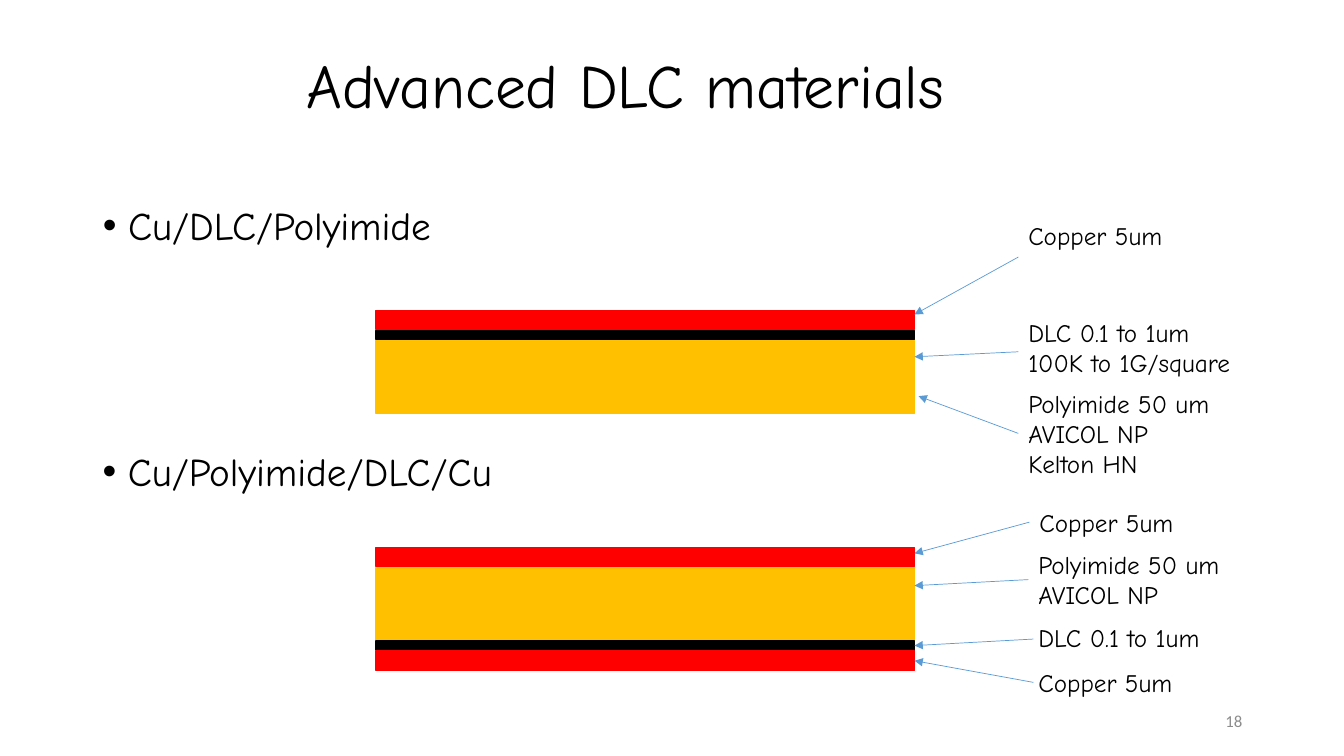
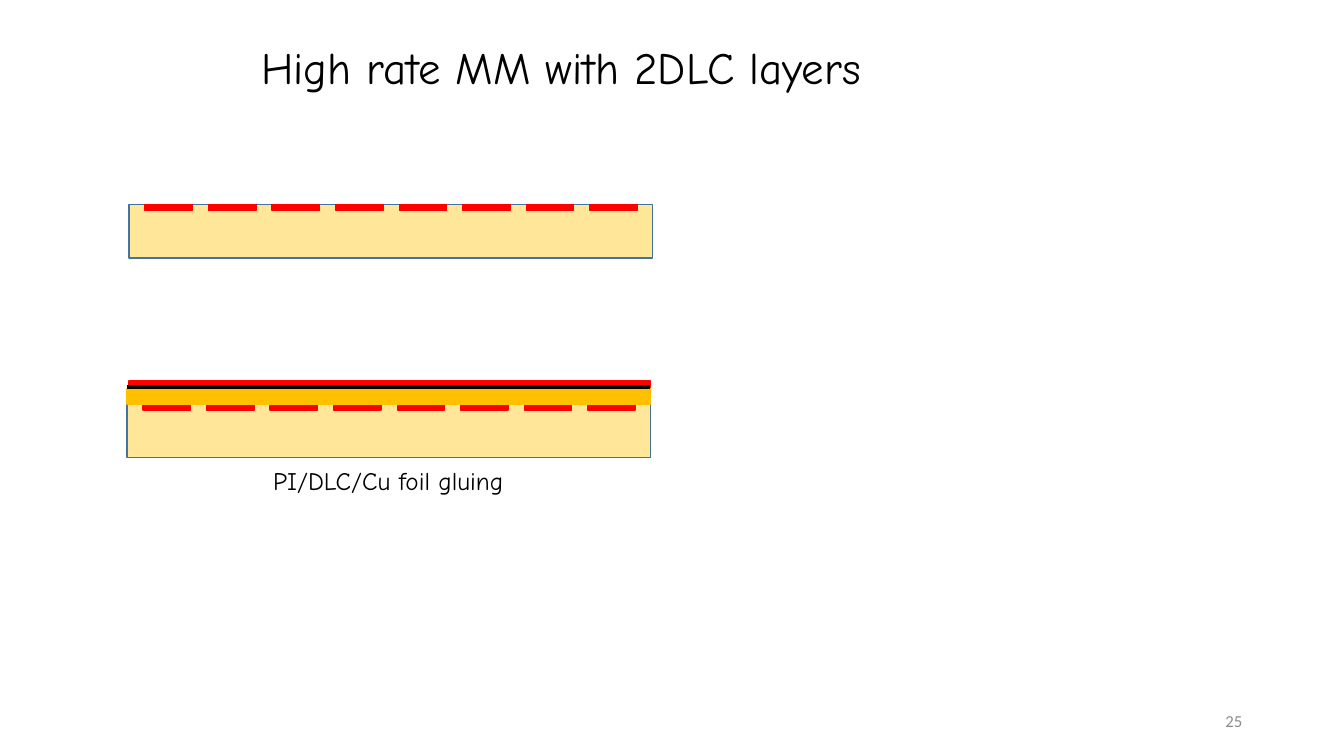
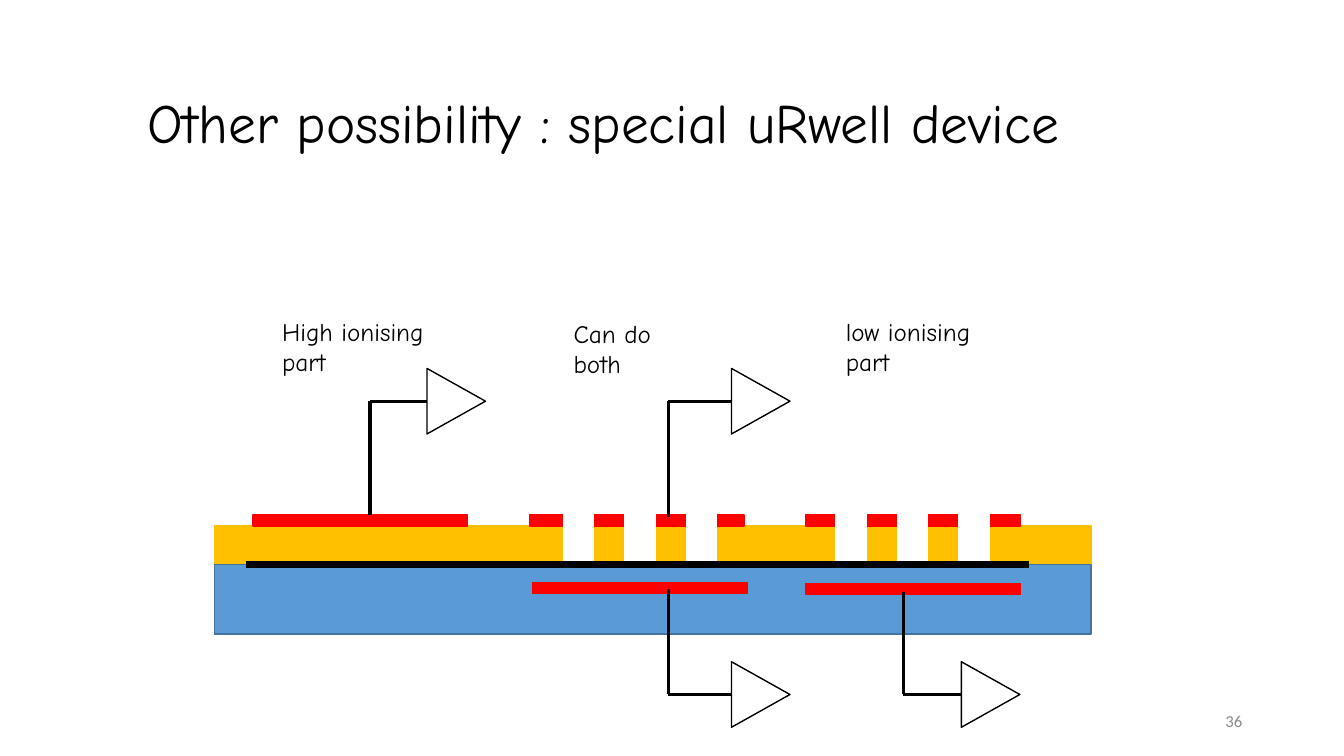
from lxml import etree
from pptx import Presentation
from pptx.dml.color import RGBColor
from pptx.enum.shapes import MSO_CONNECTOR, MSO_SHAPE
from pptx.enum.text import MSO_ANCHOR, MSO_AUTO_SIZE, PP_ALIGN
from pptx.oxml.ns import qn
from pptx.util import Inches, Pt

# Shared style
BLACK = RGBColor(0x00, 0x00, 0x00)
WHITE = RGBColor(0xFF, 0xFF, 0xFF)
COPPER = RGBColor(0xFF, 0x00, 0x00)
POLYIMIDE = RGBColor(0xFF, 0xC0, 0x00)
BOARD = RGBColor(0xFF, 0xE6, 0x99)
BLUE = RGBColor(0x5B, 0x9B, 0xD5)
OUTLINE = RGBColor(0x43, 0x73, 0x9E)
GREY = RGBColor(0x8C, 0x8C, 0x8C)
FONT = "Comic Neue"
NUMBER_FONT = "Calibri"
TITLE_LAYOUT, BODY_LAYOUT = 5, 1

# Material layers: colour and thickness
CU = (COPPER, 0.19)
DLC = (BLACK, 0.09)
PI = (POLYIMIDE, 0.72)
STACK_LEFT, STACK_WIDTH, LAYER_GAP = 3.73, 5.34, 0.01


def place(shape, left, top, width, height):
    shape.left, shape.top = Inches(left), Inches(top)
    shape.width, shape.height = Inches(width), Inches(height)


def write(shape, text, size, color=BLACK, font=FONT, align=PP_ALIGN.LEFT):
    """Fill a shape with text, one paragraph for each line."""
    frame = shape.text_frame
    frame.text = text
    frame.word_wrap = True
    for para in frame.paragraphs:
        para.alignment = align
        for span in para.runs:
            span.font.name = font
            span.font.size = Pt(size)
            span.font.color.rgb = color
    return frame


def add_label(slide, text, left, top, width, size=18, **style):
    height = 0.1 + 0.3 * (text.count("\n") + 1)
    box = slide.shapes.add_textbox(
        Inches(left), Inches(top), Inches(width), Inches(height))
    write(box, text, size, **style)
    return box


def add_page(deck, layout, title, frame, size, number):
    """Add a slide with its title and page number."""
    slide = deck.slides.add_slide(deck.slide_layouts[layout])
    place(slide.shapes.title, *frame)
    text_frame = write(slide.shapes.title, title, size)
    text_frame.auto_size = MSO_AUTO_SIZE.NONE
    text_frame.vertical_anchor = MSO_ANCHOR.MIDDLE
    text_frame.paragraphs[0].line_spacing = 0.9
    page_number = add_label(slide, number, 9.42, 6.95, 3, 12, color=GREY,
                            font=NUMBER_FONT, align=PP_ALIGN.RIGHT)
    page_number.text_frame.vertical_anchor = MSO_ANCHOR.MIDDLE
    return slide


def write_bullet(shape, text, top):
    place(shape, 0.92, top, 11.88, 0.72)
    frame = write(shape, text, 28)
    frame.auto_size = MSO_AUTO_SIZE.NONE
    para = frame.paragraphs[0]
    properties = para._p.get_or_add_pPr()
    properties.set("marL", str(Inches(0.25)))
    properties.set("indent", str(Inches(-0.25)))
    etree.SubElement(properties, qn("a:buFont")).set("typeface", "Arial")
    etree.SubElement(properties, qn("a:buChar")).set("char", "•")
    para.line_spacing = 0.9
    para.space_before = Pt(0)


def add_block(slide, left, top, width, height, fill, line=None,
              kind=MSO_SHAPE.RECTANGLE):
    block = slide.shapes.add_shape(
        kind, Inches(left), Inches(top), Inches(width), Inches(height))
    block.shadow.inherit = False
    block.fill.solid()
    block.fill.fore_color.rgb = fill
    block.line.color.rgb = fill if line is None else line
    block.line.width = Pt(1)
    return block


def add_line(slide, start, end, color, width, arrow=False):
    line = slide.shapes.add_connector(
        MSO_CONNECTOR.STRAIGHT, *(Inches(value) for value in start + end))
    line.line.color.rgb = color
    line.line.width = Pt(width)
    if arrow:
        outline = line.line._get_or_add_ln()
        etree.SubElement(outline, qn("a:tailEnd")).set("type", "triangle")
    etree.SubElement(line._element.spPr, qn("a:effectLst"))
    return line


def add_stack(slide, top, layers):
    """Pile up layers from the top and return their blocks."""
    blocks = []
    for color, height in layers:
        blocks.append(
            add_block(slide, STACK_LEFT, top, STACK_WIDTH, height, color))
        top += height + LAYER_GAP
    return blocks


def add_callout(slide, text, corner, start, end, layer=None, from_label=False):
    """Label with an arrow, joined to the label or layer where they meet."""
    label = add_label(slide, text, *corner, 2.42)
    arrow = add_line(slide, start, end, BLUE, 0.5, arrow=True)
    if from_label:
        arrow.begin_connect(label, 1)
    if layer is not None:
        arrow.end_connect(layer, 3)


def add_board(slide, left, top):
    """Readout board with a row of eight copper strips."""
    add_block(slide, left, top, 5.19, 0.53, BOARD, OUTLINE)
    for index in range(8):
        add_block(slide, left + 0.16 + 0.63 * index, top, 0.47, 0.06, COPPER)


def add_amplifier(slide, pad, left, middle):
    """Amplifier with an elbow wire from a pad."""
    triangle = add_block(slide, left - 0.04, middle - 0.29, 0.65, 0.58, WHITE,
                         BLACK, MSO_SHAPE.ISOSCELES_TRIANGLE)
    triangle.rotation = 90
    corner = (pad[0], middle)
    add_line(slide, pad, corner, BLACK, 2.25)
    add_line(slide, corner, (left, middle), BLACK, 2.25)


def build_materials(deck):
    slide = add_page(deck, BODY_LAYOUT, "Advanced DLC materials",
                     (2.94, 0.15, 7.45, 1.45), 44, "18")
    write_bullet(slide.placeholders[1], "Cu/DLC/Polyimide", 2)
    second = slide.shapes.add_textbox(0, 0, 0, 0)
    write_bullet(second, "Cu/Polyimide/DLC/Cu", 4.44)

    # First stack
    add_stack(slide, 3.08, (CU, DLC, PI))
    add_callout(slide, "Copper 5um", (10.1, 2.14), (10.1, 2.55), (9.07, 3.12))
    add_callout(slide, "DLC 0.1 to 1um\n100K to 1G/square", (10.1, 3.1),
                (10.1, 3.49), (9.07, 3.54))
    add_callout(slide, "Polyimide 50 um\nAVICOL NP\nKelton HN", (10.1, 3.8),
                (10.1, 4.3), (9.11, 3.93), from_label=True)

    # Second stack
    blocks = add_stack(slide, 5.43, (CU, PI, DLC, CU))
    add_callout(slide, "Copper 5um", (10.21, 4.98), (10.21, 5.18),
                (9.07, 5.49), from_label=True)
    add_callout(slide, "Polyimide 50 um\nAVICOL NP", (10.2, 5.4),
                (10.2, 5.77), (9.07, 5.81), from_label=True)
    add_callout(slide, "DLC 0.1 to 1um", (10.2, 6.12), (10.25, 6.34),
                (9.07, 6.41), blocks[2])
    add_callout(slide, "Copper 5um", (10.2, 6.57), (10.25, 6.77),
                (9.07, 6.56), blocks[3])


def build_high_rate(deck):
    slide = add_page(deck, TITLE_LAYOUT, "High rate MM with 2DLC layers",
                     (2.49, 0.07, 10.15, 1.25), 32, "25")
    add_board(slide, 1.28, 2.03)

    # Board with the glued foil
    add_board(slide, 1.26, 4.01)
    add_block(slide, 1.28, 3.78, 5.17, 0.06, COPPER)
    add_block(slide, 1.26, 3.86, 5.19, 0.15, POLYIMIDE)
    add_line(slide, (1.26, 3.84), (6.45, 3.84), BLACK, 2.5)
    add_label(slide, "PI/DLC/Cu foil gluing", 2.61, 4.57, 2.78)


def build_special_device(deck):
    slide = add_page(deck, TITLE_LAYOUT,
                     "Other possibility : special uRwell device",
                     (1.36, 0.52, 11.5, 1.45), 39.6, "36")

    # Substrate and copper pads
    add_block(slide, 2.13, 5.22, 8.69, 0.38, POLYIMIDE)
    add_block(slide, 2.13, 5.6, 8.69, 0.69, BLUE, OUTLINE)
    for left, top in ((2.51, 5.11), (5.25, 5.11), (7.99, 5.11),
                      (5.28, 5.78), (7.99, 5.79)):
        add_block(slide, left, top, 2.13, 0.11, COPPER)

    # Wells, with the DLC layer below them
    for first in (5.59, 8.29):
        for index in range(3):
            add_block(slide, first + 0.61 * index, 5.1, 0.3, 0.49, WHITE)
    add_line(slide, (2.44, 5.6), (10.21, 5.6), BLACK, 5)

    # Readout
    for pad, left, middle in (((3.67, 5.11), 4.24, 3.98),
                              ((6.63, 5.13), 7.26, 3.98),
                              ((6.63, 5.84), 7.26, 6.89),
                              ((8.96, 5.87), 9.54, 6.89)):
        add_amplifier(slide, pad, left, middle)
    for text, left, top, width in (("High ionising part", 2.7, 3.09, 1.9),
                                   ("Can do both", 5.59, 3.11, 1.3),
                                   ("low ionising part", 8.29, 3.09, 1.75)):
        add_label(slide, text, left, top, width)


def main():
    deck = Presentation()
    deck.slide_width, deck.slide_height = Inches(13.33), Inches(7.5)
    build_materials(deck)
    build_high_rate(deck)
    build_special_device(deck)
    deck.save("out.pptx")


if __name__ == "__main__":
    main()
